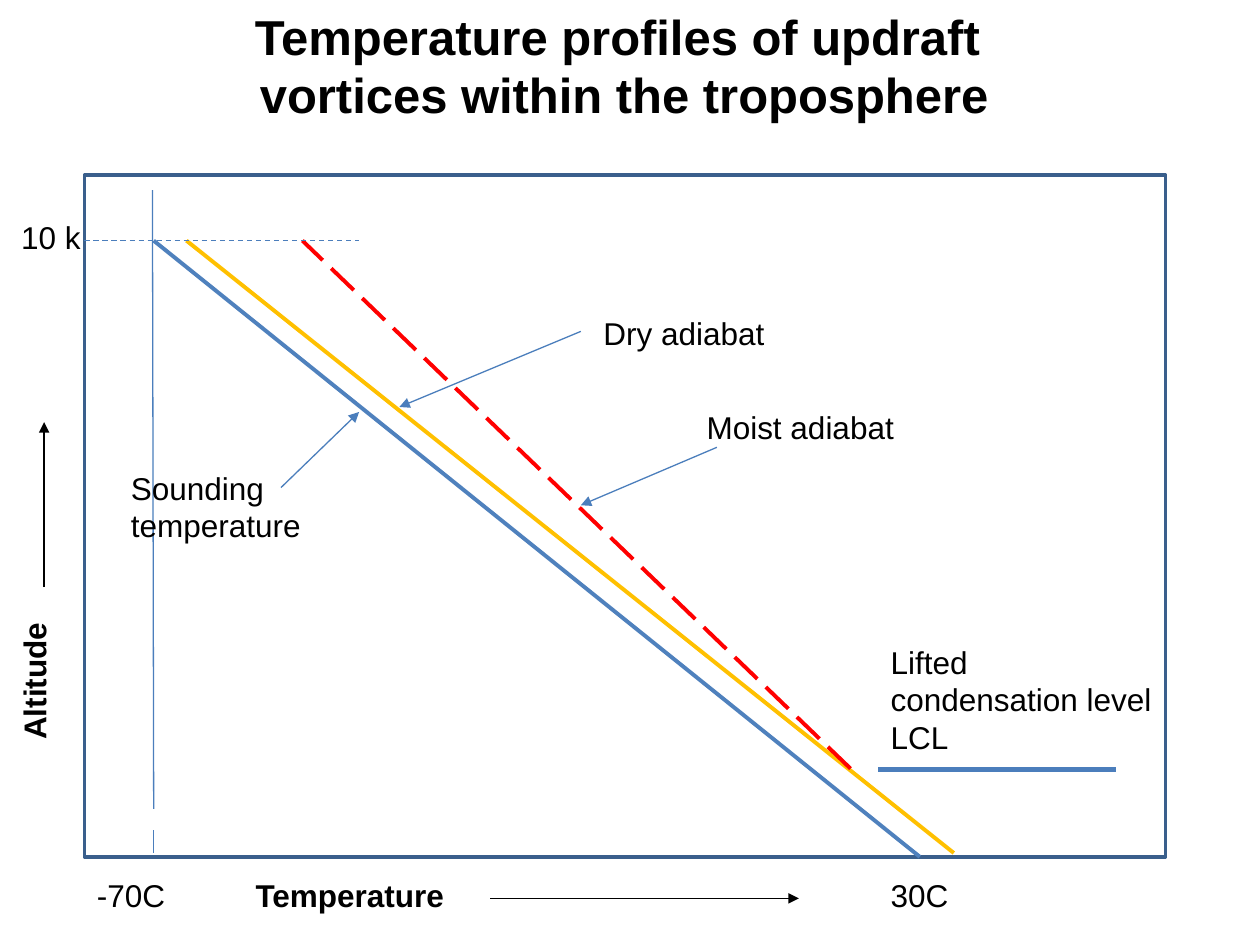
from typing import NamedTuple, Optional

from lxml.etree import SubElement
from pptx import Presentation
from pptx.dml.color import RGBColor
from pptx.enum.dml import MSO_LINE
from pptx.enum.shapes import MSO_CONNECTOR, MSO_SHAPE
from pptx.enum.text import PP_ALIGN
from pptx.oxml.ns import qn
from pptx.slide import Slide
from pptx.util import Pt

PX = 9144  # EMU per px, 100 px to the inch

BLACK = RGBColor(0x00, 0x00, 0x00)
FRAME_BLUE = RGBColor(0x3A, 0x5F, 0x8C)
SOUNDING_BLUE = RGBColor(0x4F, 0x81, 0xBD)
GUIDE_BLUE = RGBColor(0x4B, 0x7E, 0xBC)
DRY_YELLOW = RGBColor(0xFF, 0xC0, 0x00)
MOIST_RED = RGBColor(0xFF, 0x00, 0x00)

# Shared positions of the diagram
FRAME_LEFT, FRAME_TOP, FRAME_WIDTH, FRAME_HEIGHT = 67, 139, 858, 541
TOP_LEVEL = 191
COLD_X = 122
AXIS_LABEL_TOP = 690


class Line(NamedTuple):
    x1: int
    y1: int
    x2: int
    y2: int
    color: RGBColor = GUIDE_BLUE
    points: float = 0.75
    dash: Optional[MSO_LINE] = None
    arrow: bool = False


class Label(NamedTuple):
    text: str
    left: int
    top: int
    width: int
    height: int
    size: int = 18
    bold: bool = False
    align: PP_ALIGN = PP_ALIGN.LEFT
    upward: bool = False


PROFILES = [
    Line(757, 677, 148, TOP_LEVEL, DRY_YELLOW, 2.25),
    Line(730, 680, COLD_X, TOP_LEVEL, SOUNDING_BLUE, 2.25),
    Line(675, 610, 240, TOP_LEVEL, MOIST_RED, 2.25, MSO_LINE.LONG_DASH),
]
POINTERS = [
    Line(223, 387, 285, 327, arrow=True),
    Line(461, 263, 317, 323, arrow=True),
    Line(569, 355, 461, 401, arrow=True),
]
AXIS_ARROWS = [
    Line(35, 466, 35, 335, BLACK, arrow=True),
    Line(389, 713, 634, 713, BLACK, arrow=True),
]
GUIDES = [
    Line(697, 611, 886, 611, points=3),
    Line(FRAME_LEFT, TOP_LEVEL, 285, TOP_LEVEL, dash=MSO_LINE.DASH),
    Line(COLD_X, 677, COLD_X, 659),
    Line(121, 151, COLD_X, 642),
]
LABELS = [
    Label("Temperature profiles of updraft\n vortices within the troposphere",
          53, 0, 874, 104, 28, True, PP_ALIGN.CENTER),
    Label("Sounding temperature", 94, 367, 179, 68),
    Label("Dry adiabat", 469, 244, 261, 42),
    Label("Moist adiabat", 551, 319, 320, 42),
    Label("Lifted condensation level LCL", 697, 505, 230, 101),
    Label("Altitude", 7, 484, 50, 113, bold=True, upward=True),
    Label("Temperature", 193, AXIS_LABEL_TOP, 323, 40, bold=True),
    Label("-70C", 67, AXIS_LABEL_TOP, 102, 40),
    Label("30C", 697, AXIS_LABEL_TOP, 79, 40),
    Label("10 k", 7, 168, 118, 40),
]


def draw_frame(slide: Slide) -> None:
    shape = slide.shapes.add_shape(
        MSO_SHAPE.RECTANGLE, FRAME_LEFT * PX, FRAME_TOP * PX,
        FRAME_WIDTH * PX, FRAME_HEIGHT * PX)
    shape.shadow.inherit = False
    shape.fill.background()
    shape.line.color.rgb = FRAME_BLUE
    shape.line.width = Pt(2)


def draw_line(slide: Slide, line: Line) -> None:
    connector = slide.shapes.add_connector(
        MSO_CONNECTOR.STRAIGHT, line.x1 * PX, line.y1 * PX,
        line.x2 * PX, line.y2 * PX)
    connector.line.color.rgb = line.color
    connector.line.width = Pt(line.points)
    if line.dash is not None:
        connector.line.dash_style = line.dash
    properties = connector._element.spPr
    if line.arrow:
        SubElement(properties.find(qn("a:ln")), qn("a:tailEnd"), type="triangle")
    SubElement(properties, qn("a:effectLst"))


def draw_label(slide: Slide, label: Label) -> None:
    shape = slide.shapes.add_textbox(
        label.left * PX, label.top * PX, label.width * PX, label.height * PX)
    frame = shape.text_frame
    frame.word_wrap = True
    if label.upward:
        frame._txBody.bodyPr.set("vert", "vert270")
    frame.text = label.text
    for paragraph in frame.paragraphs:
        paragraph.alignment = label.align
        paragraph.font.name = "Arial"
        paragraph.font.size = Pt(label.size)
        paragraph.font.bold = label.bold
        paragraph.font.color.rgb = BLACK


def main() -> None:
    presentation = Presentation()
    presentation.slide_width = 1000 * PX
    presentation.slide_height = 750 * PX
    slide = presentation.slides.add_slide(presentation.slide_layouts[6])

    # Diagram frame and lines
    draw_frame(slide)
    for line in PROFILES + POINTERS + AXIS_ARROWS + GUIDES:
        draw_line(slide, line)

    # Title, axis names and callouts
    for label in LABELS:
        draw_label(slide, label)

    presentation.save("out.pptx")


if __name__ == "__main__":
    main()
